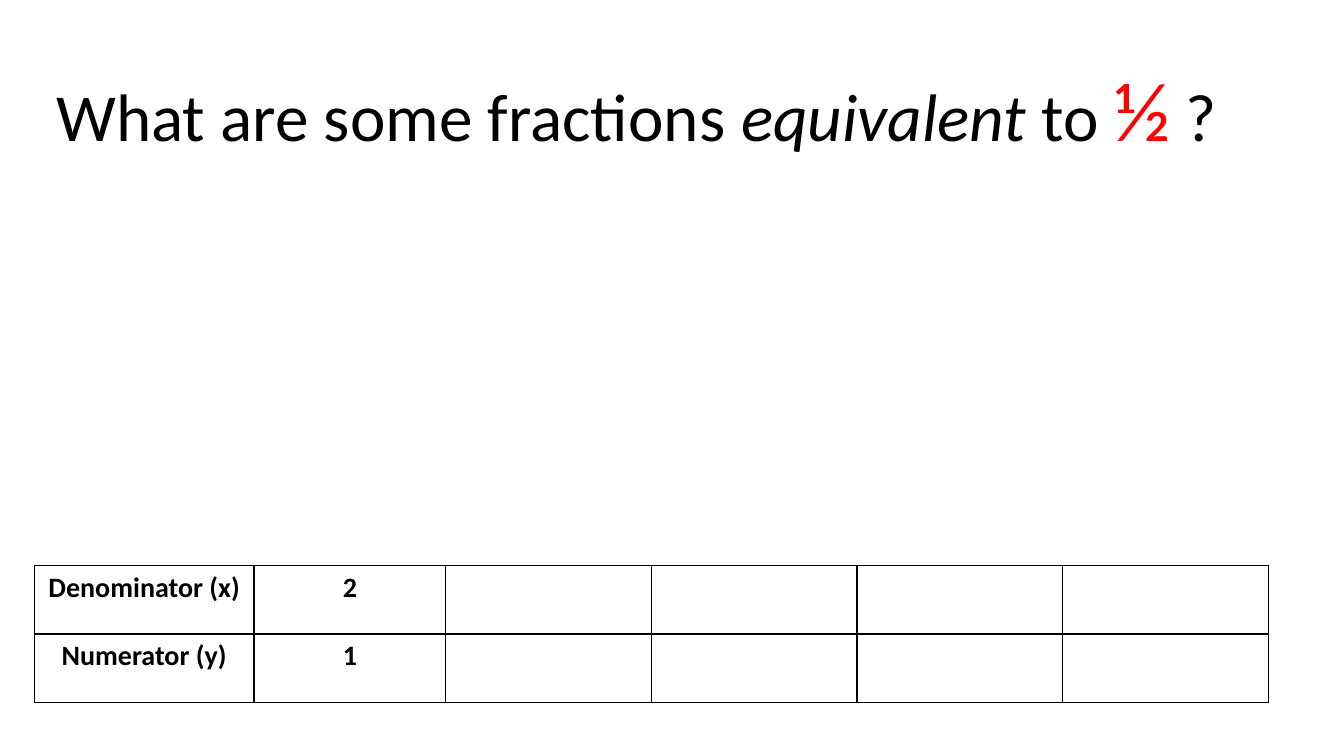
from lxml import etree
from pptx import Presentation
from pptx import util as u
from pptx.dml.color import RGBColor
from pptx.enum import text
from pptx.oxml.ns import qn

BLACK = RGBColor(0, 0, 0)
RED = RGBColor(255, 0, 0)
FONT = "Calibri"
ROWS = [("Denominator (x)", "2"), ("Numerator (y)", "1")]
WIDTHS = [2.18, 1.9] + [2.04] * 4
HIGH = 0.68


def add_run(para, words, size, color=BLACK, bold=False, slant=False):
    """Append one formatted run to a paragraph."""
    run = para.add_run()
    run.text = words
    font = run.font
    font.name, font.size = FONT, u.Pt(size)
    font.bold, font.italic = bold, slant
    font.color.rgb = color


def set_title(slide):
    """Place the question and write its runs."""
    title = slide.shapes.title
    title.left, title.top = u.Inches(0.46), u.Inches(0.63)
    title.width, title.height = u.Inches(11.95), u.Inches(6.12)
    frame = title.text_frame
    frame.word_wrap = True
    frame.auto_size = text.MSO_AUTO_SIZE.NONE
    frame.vertical_anchor = text.MSO_ANCHOR.TOP
    para = frame.paragraphs[0]
    para.alignment = text.PP_ALIGN.LEFT
    para.line_spacing = 0.9
    para.space_before = u.Pt(10)
    add_run(para, "What are some fractions ", 48)
    add_run(para, "equivalent", 48, slant=True)
    add_run(para, " to ", 48)
    add_run(para, "½", 60, RED)
    add_run(para, " ?", 48)


def set_cell(cell):
    """Clear the fill of a cell and rule its four sides."""
    cell.fill.background()
    props = cell._tc.get_or_add_tcPr()
    for at, side in enumerate(("lnL", "lnR", "lnT", "lnB")):
        line = etree.Element(qn("a:" + side), w=str(u.Pt(1)))
        fill = etree.SubElement(line, qn("a:solidFill"))
        etree.SubElement(fill, qn("a:srgbClr"), val=str(BLACK))
        props.insert(at, line)


def add_grid(slide):
    """Add the table of denominators and numerators."""
    frame = slide.shapes.add_table(
        len(ROWS), len(WIDTHS), u.Inches(0.34), u.Inches(5.61),
        u.Inches(sum(WIDTHS)), u.Inches(HIGH * len(ROWS)))
    table = frame.table
    table.first_row = table.horz_banding = False
    for col, width in zip(table.columns, WIDTHS):
        col.width = u.Inches(width)
    for row, words in zip(table.rows, ROWS):
        row.height = u.Inches(HIGH)
        for cell in row.cells:
            set_cell(cell)
        for cell, word in zip(row.cells, words):
            para = cell.text_frame.paragraphs[0]
            para.alignment = text.PP_ALIGN.CENTER
            add_run(para, word, 20, bold=True)


def main():
    """Build and save the slide."""
    deck = Presentation()
    deck.slide_width, deck.slide_height = u.Inches(13.33), u.Inches(7.5)
    slide = deck.slides.add_slide(deck.slide_layouts.get_by_name("Title Only"))
    set_title(slide)
    add_grid(slide)
    deck.save("out.pptx")


if __name__ == "__main__":
    main()
